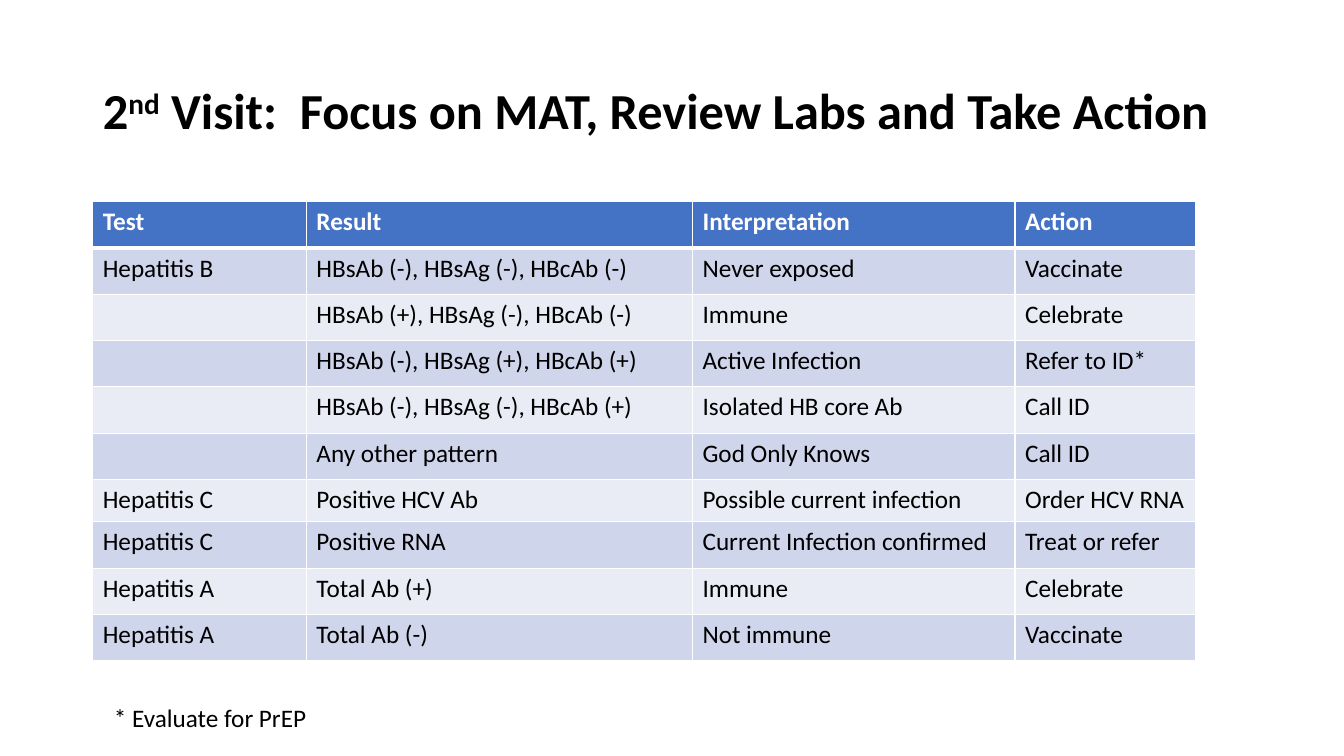
from dataclasses import dataclass

from lxml import etree
from pptx import Presentation
from pptx import util as u
from pptx.dml.color import RGBColor
from pptx.enum import text
from pptx.oxml import ns

FONT = "Calibri"
BLACK = RGBColor(0x00, 0x00, 0x00)
WHITE = RGBColor(0xFF, 0xFF, 0xFF)
HEADER_BLUE = RGBColor(0x44, 0x72, 0xC4)
BAND_DARK = RGBColor(0xCF, 0xD5, 0xEA)
BAND_LIGHT = RGBColor(0xE9, 0xEB, 0xF5)

SLIDE_WIDTH = u.Inches(13.33)
SLIDE_HEIGHT = u.Inches(7.5)


@dataclass(frozen=True)
class Area:
    left: float
    top: float
    width: float
    height: float

    def lengths(self) -> tuple[int, int, int, int]:
        return (across(self.left), down(self.top), across(self.width), down(self.height))


@dataclass(frozen=True)
class LabRow:
    test: str
    result: str
    interpretation: str
    action: str
    height: float = 6.13

    def values(self) -> tuple[str, str, str, str]:
        return (self.test, self.result, self.interpretation, self.action)


TITLE_AREA = Area(6.9, 5.33, 86.27, 19.33)
TABLE_AREA = Area(6.9, 26.67, 82.06, 60.77)
FOOTNOTE_AREA = Area(7.73, 92.27, 26.03, 5.33)
COLUMN_WIDTHS = (15.9, 28.73, 24.0, 13.43)

LAB_ROWS = (
    LabRow("Test", "Result", "Interpretation", "Action"),
    LabRow("Hepatitis B", "HBsAb (-), HBsAg (-), HBcAb (-)", "Never exposed", "Vaccinate"),
    LabRow("", "HBsAb (+), HBsAg (-), HBcAb (-)", "Immune", "Celebrate"),
    LabRow("", "HBsAb (-), HBsAg (+), HBcAb (+)", "Active Infection", "Refer to ID*"),
    LabRow("", "HBsAb (-), HBsAg (-), HBcAb (+)", "Isolated HB core Ab", "Call ID"),
    LabRow("", "Any other pattern", "God Only Knows", "Call ID"),
    LabRow("Hepatitis C", "Positive HCV Ab", "Possible current infection", "Order HCV RNA", 5.6),
    LabRow("Hepatitis C", "Positive RNA", "Current Infection confirmed", "Treat or refer"),
    LabRow("Hepatitis A", "Total Ab (+)", "Immune", "Celebrate"),
    LabRow("Hepatitis A", "Total Ab (-)", "Not immune", "Vaccinate"),
)


def across(percent: float) -> int:
    return round(SLIDE_WIDTH * percent / 100)


def down(percent: float) -> int:
    return round(SLIDE_HEIGHT * percent / 100)


def add_run(paragraph, words: str, size: int = 18, color: RGBColor = BLACK, bold: bool = False):
    run = paragraph.add_run()
    run.text = words
    run.font.name = FONT
    run.font.size = u.Pt(size)
    run.font.bold = bold
    run.font.color.rgb = color
    return run


def add_title(slide) -> None:
    title = slide.shapes.title
    title.left, title.top, title.width, title.height = TITLE_AREA.lengths()
    frame = title.text_frame
    frame.word_wrap = True
    frame.auto_size = text.MSO_AUTO_SIZE.NONE
    frame.vertical_anchor = text.MSO_ANCHOR.MIDDLE
    paragraph = frame.paragraphs[0]
    paragraph.alignment = text.PP_ALIGN.LEFT
    paragraph.line_spacing = 0.9
    add_run(paragraph, "2", 36, bold=True)
    ordinal = add_run(paragraph, "nd", 36, bold=True)
    ordinal.font._element.set("baseline", "30000")
    add_run(paragraph, " Visit:  Focus on MAT, Review Labs and Take Action", 36, bold=True)


def set_borders(cell, top: int, bottom: int) -> None:
    properties = cell._tc.get_or_add_tcPr()
    for side, points in (("lnL", 1), ("lnR", 1), ("lnT", top), ("lnB", bottom)):
        line = etree.SubElement(properties, ns.qn(f"a:{side}"), w=str(u.Pt(points)))
        fill = etree.SubElement(line, ns.qn("a:solidFill"))
        etree.SubElement(fill, ns.qn("a:srgbClr"), val=str(WHITE))


def add_lab_table(slide) -> None:
    table = slide.shapes.add_table(len(LAB_ROWS), len(COLUMN_WIDTHS), *TABLE_AREA.lengths()).table
    for column, width in zip(table.columns, COLUMN_WIDTHS):
        column.width = across(width)
    for index, (row, lab_row) in enumerate(zip(table.rows, LAB_ROWS)):
        row.height = down(lab_row.height)
        header = index == 0
        band = HEADER_BLUE if header else BAND_DARK if index % 2 else BAND_LIGHT
        for cell, words in zip(row.cells, lab_row.values()):
            set_borders(cell, top=3 if index == 1 else 1, bottom=3 if header else 1)
            cell.fill.solid()
            cell.fill.fore_color.rgb = band
            if words:
                add_run(cell.text_frame.paragraphs[0], words,
                        color=WHITE if header else BLACK, bold=header)


def add_footnote(slide) -> None:
    frame = slide.shapes.add_textbox(*FOOTNOTE_AREA.lengths()).text_frame
    frame.word_wrap = True
    frame.auto_size = text.MSO_AUTO_SIZE.SHAPE_TO_FIT_TEXT
    add_run(frame.paragraphs[0], "* Evaluate for PrEP")


def main() -> None:
    presentation = Presentation()
    presentation.slide_width = SLIDE_WIDTH
    presentation.slide_height = SLIDE_HEIGHT
    slide = presentation.slides.add_slide(presentation.slide_layouts.get_by_name("Title Only"))
    add_title(slide)
    add_lab_table(slide)
    add_footnote(slide)
    presentation.save("out.pptx")


if __name__ == "__main__":
    main()
